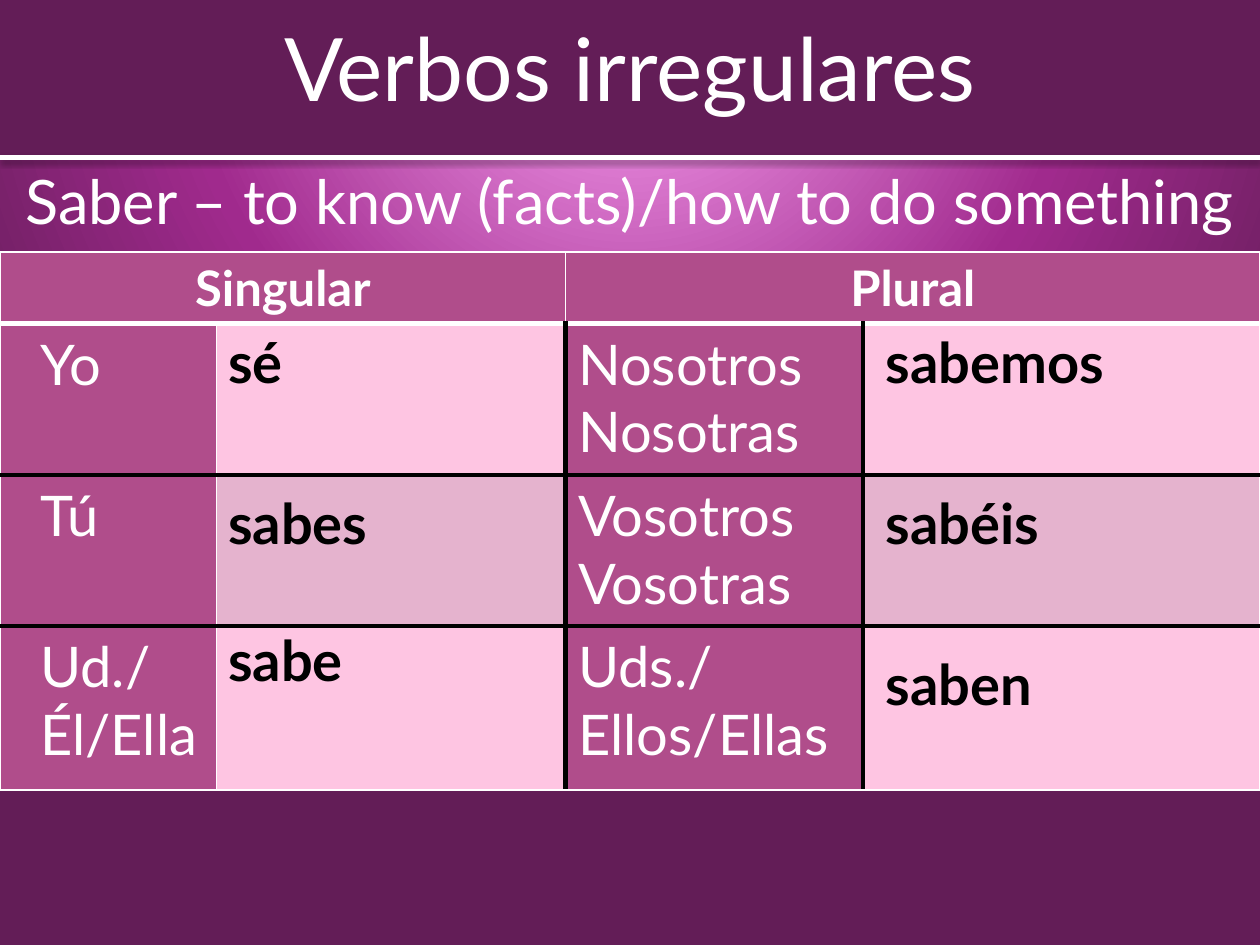
from lxml import etree
from pptx import Presentation
from pptx import util as u
from pptx.dml.color import RGBColor
from pptx.enum import shapes, text
from pptx.oxml import ns

COLORS = {
    "white": "FFFFFF", "black": "000000", "plum": "631D57", "magenta": "A02A8D",
    "glow": "FEA8F7", "rose": "B04D8B", "pale": "FEC5E2", "dusty": "E5B3CE",
}


class VerbSlide:
    """Style of a verb chart and the slide it is drawn on."""

    font = "Lato"

    def __init__(self, deck):
        self.slide = deck.slides.add_slide(deck.slide_layouts[6])

    def color(self, name):
        return RGBColor.from_string(COLORS[name])

    def sub(self, parent, tag, **attributes):
        return etree.SubElement(parent, ns.qn(tag), {k: str(v) for k, v in attributes.items()})

    def background(self, stops):
        self.slide.background.fill.gradient()
        gradient = next(self.slide.element.iter(ns.qn("a:gradFill")))
        for child in list(gradient):
            gradient.remove(child)
        stop_list = self.sub(gradient, "a:gsLst")
        for percent, name in stops:
            stop = self.sub(stop_list, "a:gs", pos=percent * 1000)
            self.sub(stop, "a:srgbClr", val=COLORS[name])
        circle = self.sub(gradient, "a:path", path="circle")
        self.sub(circle, "a:fillToRect", l=50000, t=-80000, r=50000, b=180000)

    def band(self, left, top, width, height, fill):
        band = self.slide.shapes.add_shape(
            shapes.MSO_SHAPE.RECTANGLE, *map(u.Inches, (left, top, width, height)))
        band.shadow.inherit = False
        band.fill.solid()
        band.fill.fore_color.rgb = self.color(fill)
        band.line.fill.background()

    def rule(self, x1, y1, x2, y2, name, width):
        rule = self.slide.shapes.add_connector(
            shapes.MSO_CONNECTOR.STRAIGHT, *map(u.Inches, (x1, y1, x2, y2)))
        rule.line.color.rgb = self.color(name)
        rule.line.width = u.Pt(width)
        effects = self.sub(rule.element.spPr, "a:effectLst")
        shadow = self.sub(effects, "a:outerShdw", blurRad=u.Pt(3.1), dist=u.Pt(1.6),
                          dir=5400000, rotWithShape=0)
        shade = self.sub(shadow, "a:srgbClr", val=COLORS["black"])
        self.sub(shade, "a:alpha", val=38000)

    def wording(self, frame, words, size, name="white", bold=False, align=text.PP_ALIGN.LEFT):
        frame.text = words
        frame.word_wrap = True
        for paragraph in frame.paragraphs:
            paragraph.alignment = align
            for run in paragraph.runs:
                run.font.name = self.font
                run.font.size = u.Pt(size)
                run.font.bold = bold
                run.font.color.rgb = self.color(name)

    def heading(self, left, top, width, height, words, size, anchor):
        box = self.slide.shapes.add_textbox(*map(u.Inches, (left, top, width, height)))
        box.text_frame.vertical_anchor = anchor
        self.wording(box.text_frame, words, size, align=text.PP_ALIGN.CENTER)

    def border(self, cell, **sides):
        properties = cell._tc.get_or_add_tcPr()
        for index, side in enumerate("LRTB"):
            name, width = sides[side]
            line = etree.Element(ns.qn(f"a:ln{side}"), {"w": str(u.Pt(width))})
            if name:
                self.sub(self.sub(line, "a:solidFill"), "a:srgbClr", val=COLORS[name])
            else:
                self.sub(line, "a:noFill")
            properties.insert(index, line)

    def table(self, left, top, widths, heights):
        frame = self.slide.shapes.add_table(
            len(heights), len(widths),
            *map(u.Inches, (left, top, sum(widths), sum(heights))))
        table = frame.table
        table.first_row = table.horz_banding = False
        for column, width in zip(table.columns, widths):
            column.width = u.Inches(width)
        for row, height in zip(table.rows, heights):
            row.height = u.Inches(height)
        return table

    def conjugation(self, left, top, widths, heights, headers, pronouns):
        table = self.table(left, top, widths, heights)
        thin, white, black = ("white", 1), ("white", 3), ("black", 3)
        across = [thin, white, black, black, thin]
        down = [thin, thin, black, black, thin]
        for r in range(len(heights)):
            for c in range(len(widths)):
                cell = table.cell(r, c)
                answer = "pale" if r % 2 else "dusty"
                cell.fill.solid()
                cell.fill.fore_color.rgb = self.color(answer if r and c % 2 else "rose")
                sides = down if r else [thin] * 5
                self.border(cell, L=sides[c], R=sides[c + 1], T=across[r], B=across[r + 1])
        for c, header in zip((0, 2), headers):
            table.cell(0, c).merge(table.cell(0, c + 1))
            self.wording(table.cell(0, c).text_frame, header, 28, bold=True,
                         align=text.PP_ALIGN.CENTER)
        for r, pair in enumerate(pronouns, 1):
            for c, pronoun in zip((0, 2), pair):
                self.wording(table.cell(r, c).text_frame, pronoun, 32)
            table.cell(r, 0).margin_left = u.Inches(0.32)

    def answer(self, left, top, width, height, verb):
        cell = self.table(left, top, [width], [height]).cell(0, 0)
        cell.fill.background()
        self.border(cell, **{side: (None, 1) for side in "LRTB"})
        self.wording(cell.text_frame, verb, 32, "black", bold=True)


def main():
    deck = Presentation()
    deck.slide_width, deck.slide_height = u.Inches(10), u.Inches(7.5)
    saber = VerbSlide(deck)
    saber.background([(0, "glow"), (57, "magenta"), (100, "plum")])
    saber.band(0, 0, 10, 1.25, "plum")
    saber.heading(0, 1.25, 10, 0.75, "Saber – to know (facts)/how to do something", 35,
                  text.MSO_ANCHOR.TOP)
    saber.rule(0, 1.25, 10, 1.25, "white", 3)
    saber.heading(0, 0, 10, 1.06, "Verbos irregulares", 50, text.MSO_ANCHOR.MIDDLE)
    saber.conjugation(
        0, 2, [1.72, 2.77, 2.36, 3.15], [0.57, 1.2, 1.2, 1.3], ["Singular", "Plural"],
        [("Yo", "Nosotros\nNosotras"), ("Tú", "Vosotros\nVosotras"),
         ("Ud./\nÉl/Ella", "Uds./Ellos/Ellas")])
    singular, plural = 1.71, 6.93
    for left, top, width, height, verb in [
        (singular, 2.55, 2.46, 0.63, "sé"),
        (singular, 3.83, 2.34, 0.63, "sabes"),
        (singular, 4.92, 2.46, 0.67, "sabe"),
        (plural, 2.55, 2.82, 0.68, "sabemos"),
        (plural, 3.83, 2.52, 0.63, "sabéis"),
        (plural, 5.11, 2.4, 0.63, "saben"),
    ]:
        saber.answer(left, top, width, height, verb)
    deck.save("out.pptx")


if __name__ == "__main__":
    main()
